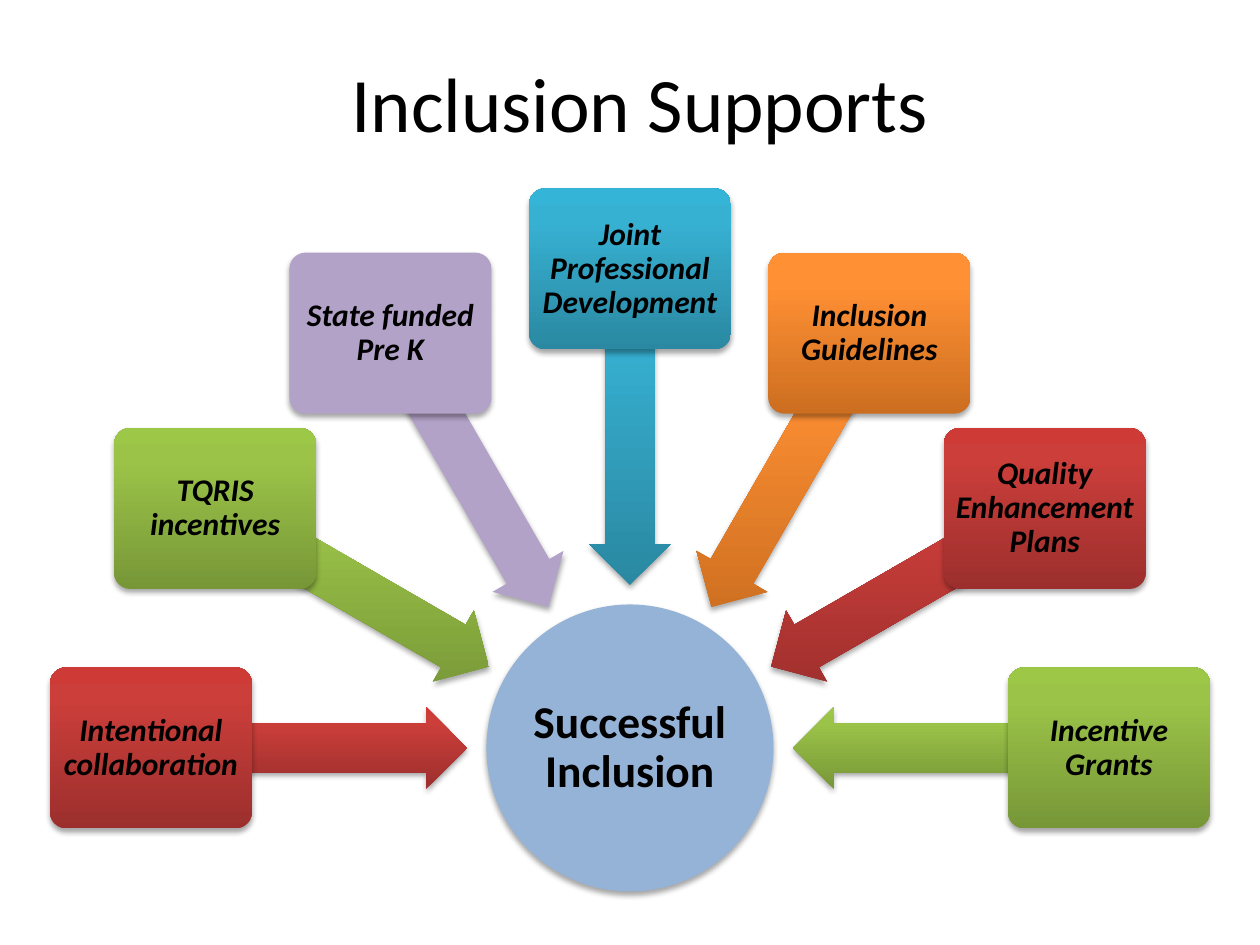
from copy import deepcopy
from math import cos, radians, sin

from lxml import etree
from pptx import Presentation
from pptx.dml.color import RGBColor
from pptx.enum.shapes import MSO_SHAPE
from pptx.enum.text import MSO_ANCHOR, PP_ALIGN
from pptx.oxml.ns import qn
from pptx.util import Emu, Pt

OVAL, ARROW, ROUND = MSO_SHAPE.OVAL, MSO_SHAPE.LEFT_ARROW, MSO_SHAPE.ROUNDED_RECTANGLE
MIDDLE, CENTER = MSO_ANCHOR.MIDDLE, PP_ALIGN.CENTER

SCALE = 914400 / 126  # EMU in one px
BLACK = RGBColor(0x00, 0x00, 0x00)
BLUE = RGBColor(0x95, 0xB3, 0xD7)
LILAC = RGBColor(0xB3, 0xA2, 0xC7)
# Gradients run from bottom to top
RED = (RGBColor(0x9C, 0x2F, 0x2D), RGBColor(0xCB, 0x3E, 0x3A), RGBColor(0xCE, 0x3B, 0x37))
GREEN = (RGBColor(0x77, 0x97, 0x37), RGBColor(0x9B, 0xC3, 0x48), RGBColor(0x9D, 0xC7, 0x46))
TEAL = (RGBColor(0x2A, 0x88, 0xA2), RGBColor(0x37, 0xB1, 0xD2), RGBColor(0x34, 0xB4, 0xD6))
ORANGE = (RGBColor(0xCC, 0x6E, 0x20), RGBColor(0xFF, 0x90, 0x34), RGBColor(0xFF, 0x91, 0x36))
STOPS = (0, 0.8, 1)

# Fan of supports around the hub
HUB = (630, 748)
REACH, MID = 479, 321  # hub to box centre, hub to arrow centre
STEP = 30
SUPPORTS = [
    ("Intentional collaboration", RED),
    ("TQRIS incentives", GREEN),
    ("State funded Pre K", LILAC),
    ("Joint Professional Development", TEAL),
    ("Inclusion Guidelines", ORANGE),
    ("Quality Enhancement Plans", RED),
    ("Incentive Grants", GREEN),
]


def px(num):
    return Emu(round(num * SCALE))


def put(item, **vals):
    for key, val in vals.items():
        setattr(item, key, val)


class Board:
    font = {"name": "Calibri"}
    hub = {"size": Pt(26), "bold": True}
    label = {"size": Pt(18), "bold": True, "italic": True}

    def __init__(self, deck):
        self.slide = deck.slides.add_slide(deck.slide_layouts[5])

    def text(self, shape, words, form, inset):
        frame = shape.text_frame
        put(frame, text=words, word_wrap=True, vertical_anchor=MIDDLE,
            margin_left=px(inset), margin_right=px(inset),
            margin_top=px(inset), margin_bottom=px(inset))
        para = frame.paragraphs[0]
        put(para, alignment=CENTER, line_spacing=form.get("lead", 0.9))
        face = para.runs[0].font
        put(face, **self.font, **{k: v for k, v in form.items() if k != "lead"})
        face.color.rgb = BLACK

    def title(self, words, left, top, width, height):
        shape = self.slide.shapes.title
        put(shape, left=px(left), top=px(top), width=px(width), height=px(height))
        self.text(shape, words, {"size": Pt(44), "lead": 1.0}, 6)

    def paint(self, shape, tone):
        fill = shape.fill
        if isinstance(tone, RGBColor):
            fill.solid()
            fill.fore_color.rgb = tone
            return
        fill.gradient()
        fill.gradient_angle = 90
        grad = shape.element.spPr.find(qn("a:gradFill"))
        grad.set("rotWithShape", "0")  # light stays on top when turned
        stops = grad.find(qn("a:gsLst"))
        stops.append(deepcopy(stops[0]))
        for stop, spot, color in zip(fill.gradient_stops, STOPS, tone):
            stop.position = spot
            stop.color.rgb = color

    def shade(self, shape):
        shape.shadow.inherit = False
        glow = shape.element.spPr.find(qn("a:effectLst"))
        drop = etree.SubElement(glow, qn("a:outerShdw"), blurRad="40000",
                                dist="23000", dir="5400000", rotWithShape="0")
        color = etree.SubElement(drop, qn("a:srgbClr"), val=str(BLACK))
        etree.SubElement(color, qn("a:alpha"), val="35000")

    def shape(self, kind, mid, size, tone, adjust=(), turn=0):
        (x, y), (width, height) = mid, size
        shape = self.slide.shapes.add_shape(
            kind, px(x - width / 2), px(y - height / 2), px(width), px(height))
        for i, val in enumerate(adjust):
            shape.adjustments[i] = val
        shape.rotation = turn
        self.paint(shape, tone)
        shape.line.fill.background()
        self.shade(shape)
        return shape

    def circle(self, words, mid, size, tone):
        shape = self.shape(OVAL, mid, (size, size), tone)
        self.text(shape, words, self.hub, 3)

    def arrow(self, mid, tone, turn):
        self.shape(ARROW, mid, (316, 82), tone, (0.6, 0.5), turn)

    def box(self, words, mid, tone):
        shape = self.shape(ROUND, mid, (202, 161), tone, (0.1,))
        self.text(shape, words, self.label, 5)


def polar(reach, turn):
    return (HUB[0] + reach * cos(radians(turn)), HUB[1] + reach * sin(radians(turn)))


def main():
    deck = Presentation()
    put(deck, slide_width=px(1260), slide_height=px(945))
    board = Board(deck)

    # Title and hub
    board.title("Inclusion Supports", 73, 21, 1134, 161)
    board.circle("Successful Inclusion", HUB, 287, BLUE)

    # Supports, from left to right over the hub
    for i, (words, tone) in enumerate(SUPPORTS):
        turn = 180 + i * STEP
        board.arrow(polar(MID, turn), tone, turn % 360)
        board.box(words, polar(REACH, turn), tone)

    deck.save("out.pptx")


if __name__ == "__main__":
    main()
